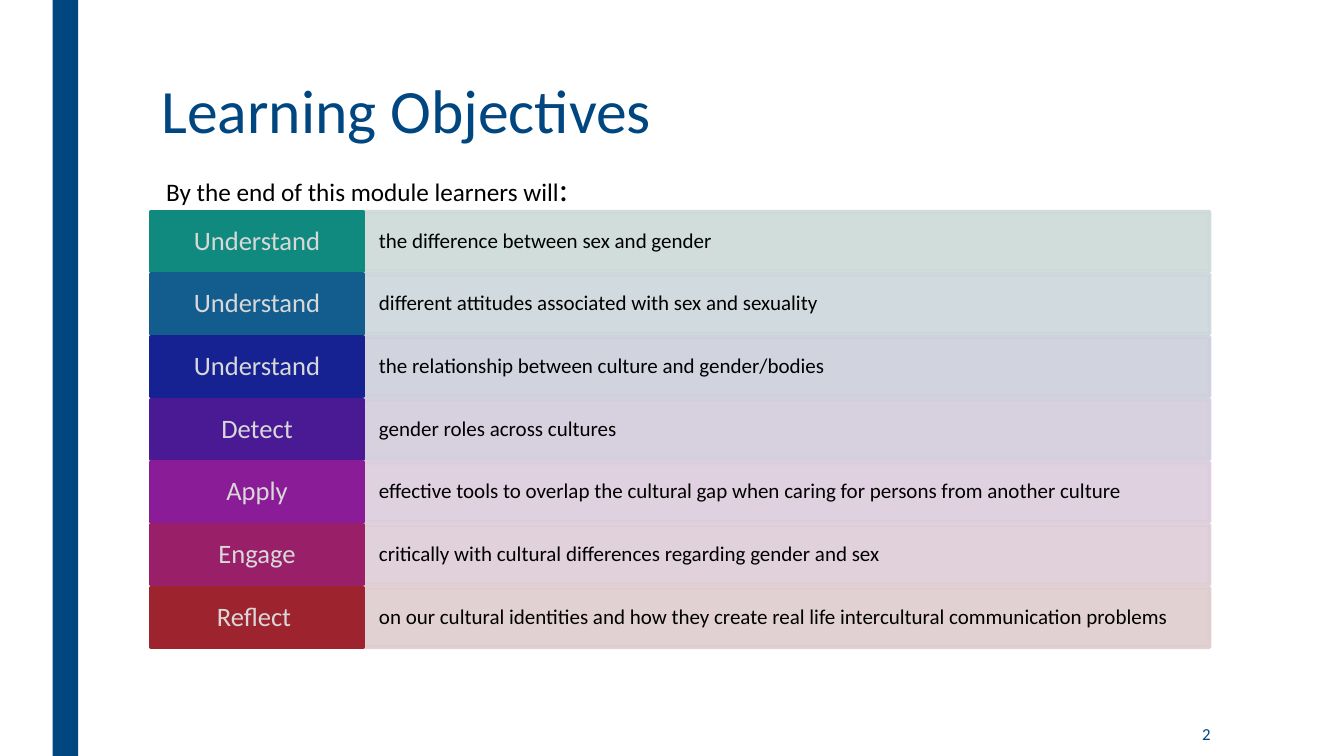
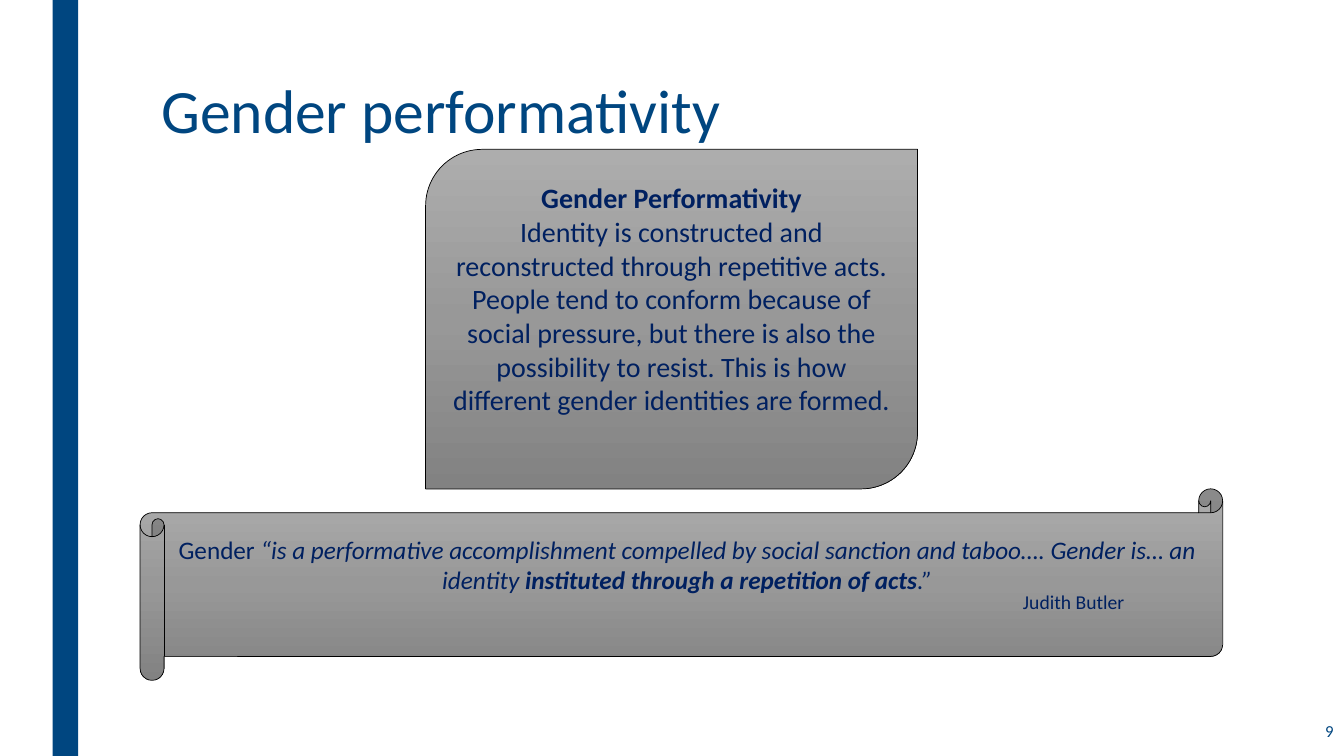
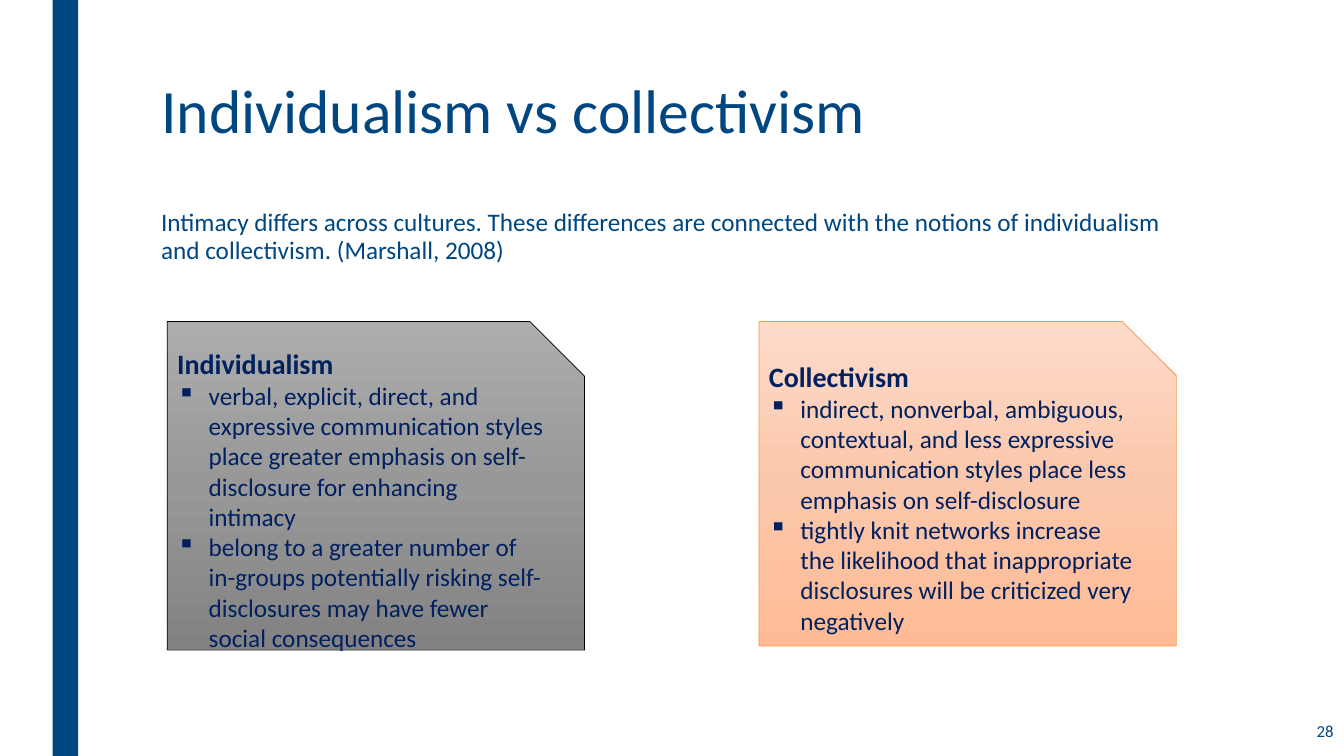
import copy

import pptx
import pptx.dml.color
import pptx.enum.shapes
import pptx.enum.text
import pptx.oxml.ns
import pptx.util
from lxml import etree

Pt = pptx.util.Pt
SHAPE = pptx.enum.shapes.MSO_SHAPE
ANCHOR = pptx.enum.text.MSO_ANCHOR
ALIGN = pptx.enum.text.PP_ALIGN
qn = pptx.oxml.ns.qn

FONT = "Calibri"
BLUE = "004680"
NAVY = "002060"
BLACK = "000000"
LABEL_GREY = "D8D8D8"
GREY_GRADIENT = ("ADADAD", "989898", "828282")
PEACH_GRADIENT = ("FDDBCA", "FBC7AB", "FEBB95")
ORANGE = "F79646"

OBJECTIVES = [
    ("Understand", "the difference between sex and gender", "108A7E", "CCDAD8"),
    ("Understand", "different attitudes associated with sex and sexuality", "135C8E", "CCD6DB"),
    ("Understand", "the relationship between culture and gender/bodies", "162291", "CDCFDC"),
    ("Detect", "gender roles across cultures", "4A1994", "D3CDDC"),
    ("Apply", "effective tools to overlap the cultural gap when caring for persons "
     "from another culture", "8B1C97", "DCCDDD"),
    ("Engage", "critically with cultural differences regarding gender and sex", "9A1F69", "DECDD7"),
    ("Reflect ", "on our cultural identities and how they create real life intercultural "
     "communication problems", "9D232F", "DFCDCE"),
]


def rgb(value):
    return pptx.dml.color.RGBColor.from_string(value)


def add_bullet(para):
    properties = para._p.get_or_add_pPr()
    properties.set("marL", str(Pt(22.5)))
    properties.set("indent", str(-Pt(22.5)))
    etree.SubElement(properties, qn("a:buChar")).set("char", "▪")


def write_text(box, paras, size=18, color=BLACK, align=ALIGN.LEFT, anchor=ANCHOR.TOP,
               insets=(7.2, 3.6, 7.2, 3.6), line_spacing=None, bullets_from=None):
    frame = box.text_frame
    frame.word_wrap = True
    frame.auto_size = pptx.enum.text.MSO_AUTO_SIZE.NONE
    frame.vertical_anchor = anchor
    frame.margin_left, frame.margin_top, frame.margin_right, frame.margin_bottom = map(Pt, insets)
    for index, spans in enumerate(paras):
        para = frame.add_paragraph() if index else frame.paragraphs[0]
        if bullets_from is not None and index >= bullets_from:
            add_bullet(para)
        para.alignment = align
        if line_spacing:
            para.line_spacing = line_spacing
        for text, style in spans:
            span = para.add_run()
            span.text = text
            span.font.name = FONT
            span.font.size = Pt(style.get("size", size))
            span.font.bold = style.get("bold", False)
            span.font.italic = style.get("italic", False)
            span.font.color.rgb = rgb(color)


def add_text(page, bounds, paras, **style):
    box = page.shapes.add_textbox(*map(Pt, bounds))
    write_text(box, paras, **style)


def add_box(page, kind, bounds, fill, line=None, width=0.5, alpha=None):
    box = page.shapes.add_shape(kind, *map(Pt, bounds))
    box.shadow.inherit = False
    if isinstance(fill, str):
        box.fill.solid()
        box.fill.fore_color.rgb = rgb(fill)
    else:
        fill_gradient(box, fill)
    if line:
        box.line.color.rgb = rgb(line)
        box.line.width = Pt(width)
    else:
        box.line.fill.background()
    if alpha:
        for color in box.element.spPr.iter(qn("a:srgbClr")):
            etree.SubElement(color, qn("a:alpha")).set("val", str(alpha * 1000))
    return box


def fill_gradient(box, colors):
    box.fill.gradient()
    box.fill.gradient_angle = 270
    stop_list = next(box.element.spPr.iter(qn("a:gsLst")))
    while len(stop_list) < len(colors):
        stop_list.append(copy.deepcopy(stop_list[-1]))
    for index, (stop, color) in enumerate(zip(box.fill.gradient_stops, colors)):
        stop.position = index / (len(colors) - 1)
        stop.color.rgb = rgb(color)


def add_page(deck, title, number, number_at=(833.76, 506.16)):
    page = deck.slides.add_slide(deck.slide_layouts[5])
    heading = page.shapes.title
    heading.left, heading.top, heading.width, heading.height = map(Pt, (108, 54, 756, 116.64))
    write_text(heading, [[(title, {})]], size=44, color=BLUE, line_spacing=0.89)
    add_text(page, (*number_at, 126, 31.68), [[(number, {})]], size=12, color=BLUE,
             align=ALIGN.RIGHT, anchor=ANCHOR.MIDDLE)
    return page


def add_band_to_layout(deck, page):
    band = add_box(page, SHAPE.RECTANGLE, (37.6, 0, 18.3, 540), BLUE)
    deck.slide_layouts[5].element.cSld.spTree.insert(2, band.element)


def add_objective(page, top, label, text, dark, light):
    height = 42.5
    detail = add_box(page, SHAPE.RECTANGLE, (259.2, top, 604.8, height), light, light, 2.75, 90)
    write_text(detail, [[(text, {})]], size=15, anchor=ANCHOR.MIDDLE,
               insets=(11.5, 10.8, 11.5, 10.8), line_spacing=0.9)
    verb = add_box(page, SHAPE.RECTANGLE, (108, top, 151.2, height), dark, dark, 2.75)
    write_text(verb, [[(label, {})]], size=19, color=LABEL_GREY, align=ALIGN.CENTER,
               anchor=ANCHOR.MIDDLE, insets=(7.9, 4.3, 7.9, 4.3), line_spacing=0.9)


def add_card(page, left, height, title, points, fill, line):
    card = add_box(page, SHAPE.SNIP_1_RECTANGLE, (left, 229.7, 298.1, height), fill, line)
    paras = [[(title, {"size": 20, "bold": True})]] + [[(point, {})] for point in points]
    write_text(card, paras, color=NAVY, anchor=ANCHOR.MIDDLE, bullets_from=1)


def add_statement(page, kind, bounds, paras, size):
    box = add_box(page, kind, bounds, GREY_GRADIENT, BLACK)
    write_text(box, paras, size=size, color=NAVY, align=ALIGN.CENTER, anchor=ANCHOR.MIDDLE,
               insets=(7.2, 3.6, 7.2, 32.9))


def build_objectives(deck):
    page = add_page(deck, "Learning Objectives", "2", (745.92, 508.32))
    add_band_to_layout(deck, page)
    for index, objective in enumerate(OBJECTIVES):
        add_objective(page, 151.2 + index * 44.76, *objective)
    add_text(page, (111.6, 116.64, 430.56, 36),
             [[("By the end of this module learners will", {}), (":", {"size": 24})]])


def build_performativity(deck):
    page = add_page(deck, "Gender performativity", "9")
    add_statement(page, SHAPE.ROUND_2_DIAG_RECTANGLE, (304, 106.7, 351.4, 242.6), [
        [("Gender Performativity", {"bold": True})],
        [("Identity is constructed and reconstructed through repetitive acts. People tend to "
          "conform because of social pressure, but there is also the possibility to resist. "
          "This is how different gender identities are formed.", {})],
    ], 20)
    add_statement(page, SHAPE.HORIZONTAL_SCROLL, (100.1, 349.2, 773.3, 136.8), [[
        ("Gender ", {}),
        ("“is a performative accomplishment compelled by social sanction and taboo…. "
         "Gender is… an identity ", {"italic": True}),
        ("instituted through a repetition of acts", {"italic": True, "bold": True}),
        (".”", {"italic": True}),
    ]], 18)
    add_text(page, (723.6, 417.6, 140.4, 24.5), [[("Judith Butler", {})]], size=14, color=NAVY)


def build_comparison(deck):
    page = add_page(deck, "Individualism vs collectivism", "28")
    add_text(page, (108, 145.44, 756, 316.8), [[
        ("Intimacy differs across cultures. These differences are connected with the notions "
         "of individualism and collectivism. (Marshall, 2008)", {})]],
        color=BLUE, line_spacing=0.94)
    add_card(page, 542.2, 231.8, "Collectivism", [
        "indirect, nonverbal, ambiguous, contextual, and less expressive communication styles "
        "place less emphasis on self-disclosure",
        "tightly knit networks increase the likelihood that inappropriate disclosures will be "
        "criticized very negatively",
    ], PEACH_GRADIENT, ORANGE)
    add_card(page, 119.5, 234.7, "Individualism", [
        "verbal, explicit, direct, and expressive communication styles place greater emphasis "
        "on self-disclosure for enhancing intimacy",
        "belong to a greater number of in-groups potentially risking self-disclosures may have "
        "fewer social consequences",
    ], GREY_GRADIENT, BLACK)


def main():
    deck = pptx.Presentation()
    deck.slide_width, deck.slide_height = Pt(960), Pt(540)
    build_objectives(deck)
    build_performativity(deck)
    build_comparison(deck)
    deck.save("out.pptx")


if __name__ == "__main__":
    main()
